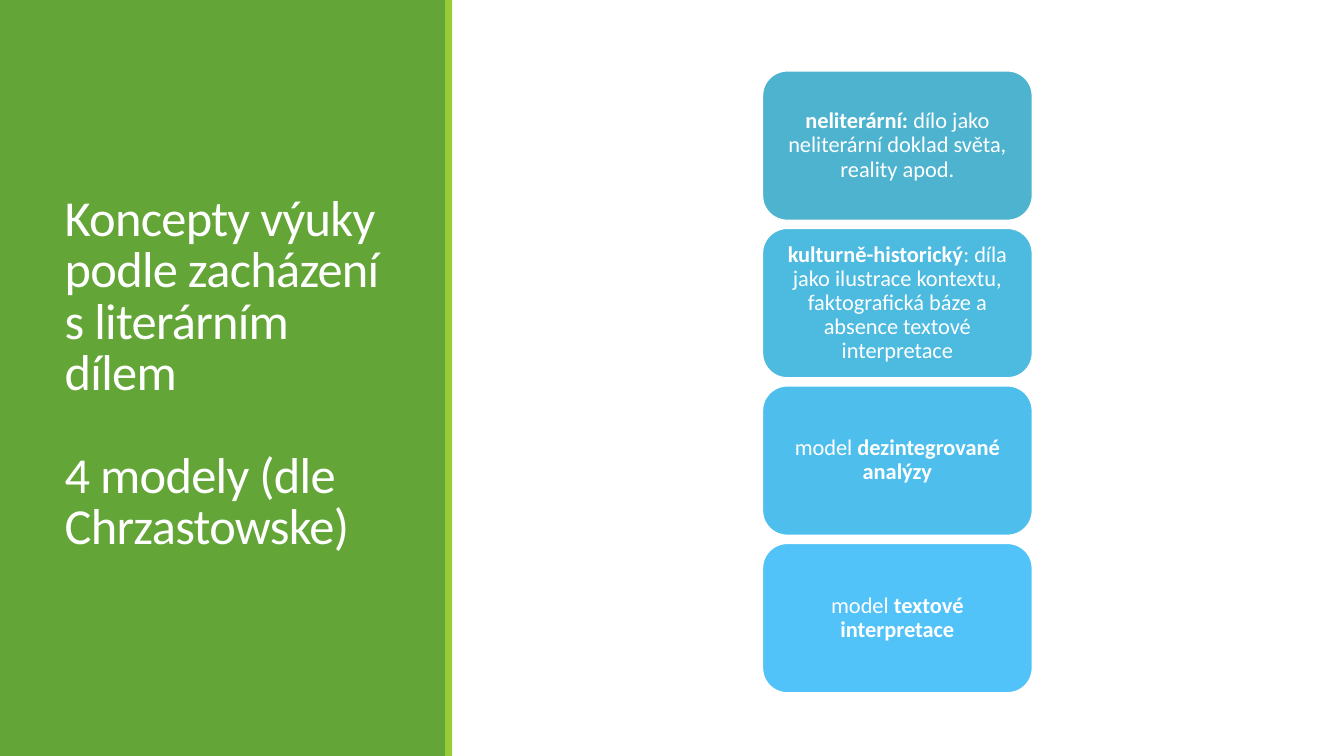
"""Build a slide with a green title panel and four teaching models."""
from pptx import Presentation
from pptx.dml.color import RGBColor
from pptx.enum.shapes import MSO_SHAPE
from pptx.enum.text import MSO_ANCHOR, MSO_AUTO_SIZE, PP_ALIGN
from pptx.oxml.ns import qn
from pptx.util import Pt

RECT, ROUND = MSO_SHAPE.RECTANGLE, MSO_SHAPE.ROUNDED_RECTANGLE
MIDDLE, NO_FIT = MSO_ANCHOR.MIDDLE, MSO_AUTO_SIZE.NONE
LEFT, CENTER = PP_ALIGN.LEFT, PP_ALIGN.CENTER
WHITE = RGBColor(0xFF, 0xFF, 0xFF)
GREEN = RGBColor(0x63, 0xA5, 0x37)
LIME = RGBColor(0x99, 0xCB, 0x38)
FONT = "Calibri"

TITLE = ("Koncepty výuky podle zacházení s literárním dílem\v\v"
         "4 modely (dle Chrzastowske)")
MODELS = [
    (RGBColor(0x4E, 0xB3, 0xCF),
     [("neliterární:", True),
      (" dílo jako neliterární doklad světa, reality apod.", False)]),
    (RGBColor(0x4D, 0xBA, 0xDF),
     [("kulturně-historický", True),
      (": díla jako ilustrace kontextu, faktografická báze "
       "a absence textové interpretace", False)]),
    (RGBColor(0x4E, 0xBF, 0xED),
     [("model ", False), ("dezintegrované analýzy", True)]),
    (RGBColor(0x51, 0xC3, 0xF9),
     [("model ", False), ("textové interpretace", True)]),
]
WIDE, HIGH = 960, 540
BOX_X, BOX_Y, BOX_W, BOX_H, STEP = 544.5, 50.5, 193, 107, 112.5


def add_box(slide, kind, x, y, w, h, fill):
    """Add a filled shape without line or shadow."""
    box = slide.shapes.add_shape(kind, Pt(x), Pt(y), Pt(w), Pt(h))
    box.shadow.inherit = False
    box.fill.solid()
    box.fill.fore_color.rgb = fill
    box.line.fill.background()
    return box


def style(para, size, align, space):
    """Set the font and layout of a paragraph."""
    para.alignment = align
    para.line_spacing = space
    para.font.name = FONT
    para.font.size = Pt(size)
    para.font.color.rgb = WHITE


def add_title(slide):
    """Fill the title and lift it above the panel."""
    title = slide.shapes.title
    title.left, title.top = Pt(39), Pt(41)
    title.width, title.height = Pt(243), Pt(454)
    frame = title.text_frame
    frame.text = TITLE
    frame.word_wrap = True
    frame.auto_size = NO_FIT
    frame.vertical_anchor = MIDDLE
    para = frame.paragraphs[0]
    style(para, 36, LEFT, 0.85)
    para._p.pPr.find(qn("a:defRPr")).set("spc", "-50")
    slide.shapes._spTree.append(title._element)


def add_model(slide, y, fill, parts):
    """Add one rounded box with its model text."""
    box = add_box(slide, ROUND, BOX_X, y, BOX_W, BOX_H, fill)
    box.line.color.rgb = WHITE
    box.line.width = Pt(1.25)
    frame = box.text_frame
    frame.word_wrap = True
    frame.vertical_anchor = MIDDLE
    frame.margin_left = frame.margin_right = Pt(5)
    frame.margin_top = frame.margin_bottom = Pt(2)
    para = frame.paragraphs[0]
    style(para, 16, CENTER, 0.9)
    for text, bold in parts:
        run = para.add_run()
        run.text = text
        run.font.bold = bold


def main():
    """Build and save the slide."""
    deck = Presentation()
    deck.slide_width, deck.slide_height = Pt(WIDE), Pt(HIGH)
    slide = deck.slides.add_slide(deck.slide_layouts[5])
    add_box(slide, RECT, 0, 0, 319, HIGH, GREEN)
    add_box(slide, RECT, 318, 0, 5, HIGH, LIME)
    add_title(slide)
    for i, (fill, parts) in enumerate(MODELS):
        add_model(slide, BOX_Y + i * STEP, fill, parts)
    deck.save("out.pptx")


if __name__ == "__main__":
    main()
